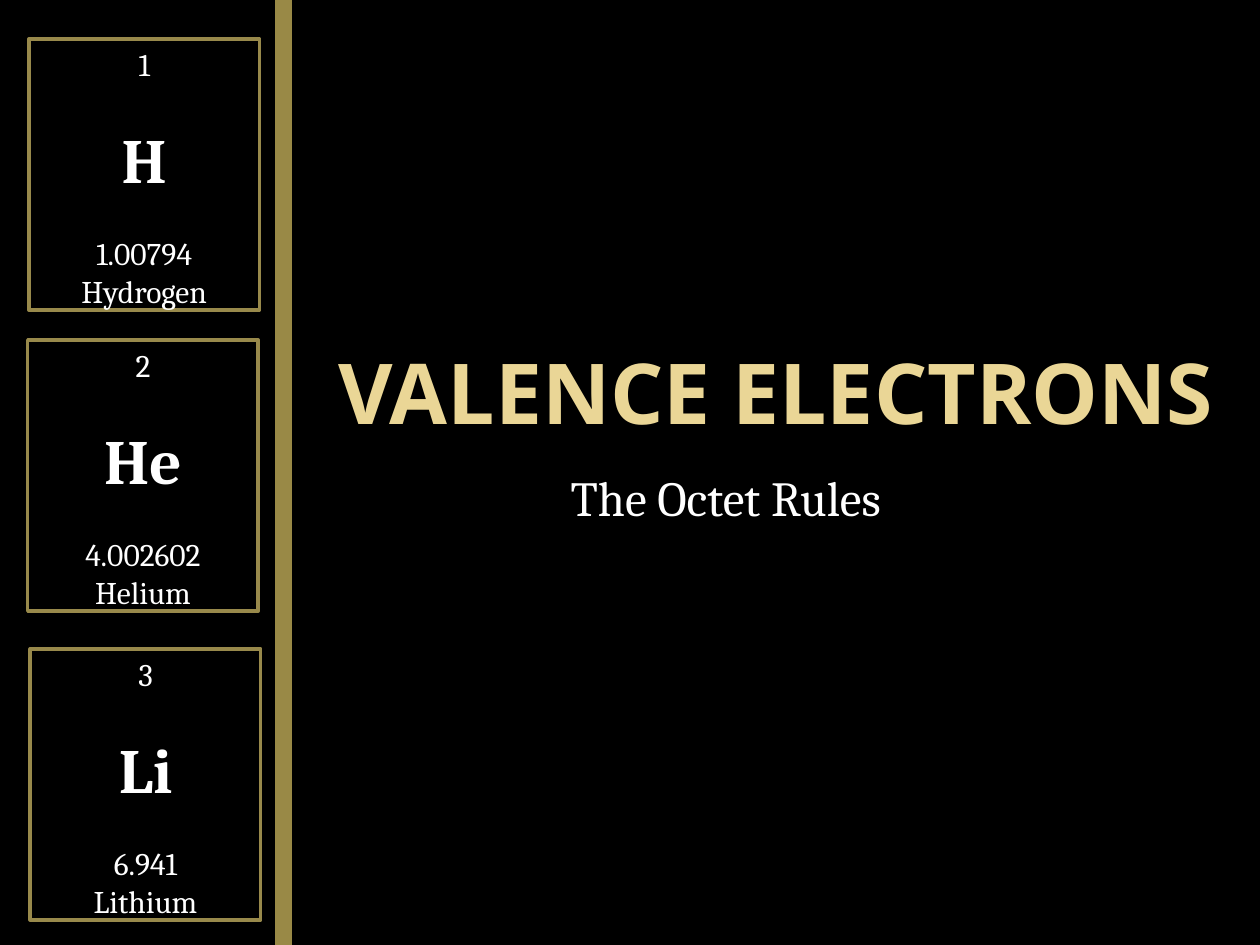
from dataclasses import dataclass

from lxml.etree import SubElement
from pptx import Presentation
from pptx.dml.color import RGBColor as RGB
from pptx.enum.shapes import MSO_CONNECTOR as Link, MSO_SHAPE as Kind
from pptx.enum.text import MSO_ANCHOR as Anchor, PP_ALIGN as Align
from pptx.oxml.ns import qn
from pptx.util import Inches, Pt


@dataclass(frozen=True)
class Theme:
    black: RGB = RGB(0x00, 0x00, 0x00)
    white: RGB = RGB(0xFF, 0xFF, 0xFF)
    cream: RGB = RGB(0xEA, 0xD6, 0x96)
    gold: RGB = RGB(0x98, 0x89, 0x4B)
    bar: RGB = RGB(0x99, 0x89, 0x46)
    head: str = "Open Sans"
    body: str = "Cambria"
    title: int = 48
    sub: int = 28
    symbol: int = 36
    small: int = 18
    gap: float = 21.5  # one small text line, in points


@dataclass(frozen=True)
class Element:
    number: int
    symbol: str
    mass: str
    name: str
    left: float
    top: float


THEME = Theme()
TILE_W, TILE_H = 1.83, 2.15
ELEMENTS = [
    Element(1, "H", "1.00794", "Hydrogen", 0.23, 0.31),
    Element(2, "He", "4.002602", "Helium", 0.22, 2.7),
    Element(3, "Li", "6.941", "Lithium", 0.24, 5.15),
]


def write(para, text: str, *, size: int, font: str = THEME.body,
          color: RGB = THEME.white, bold: bool = False, before: float = 0) -> None:
    """Fill one centred paragraph with formatted text."""
    para.alignment = Align.CENTER
    para.space_before = Pt(before)
    run = para.add_run()
    run.text = text
    run.font.size, run.font.name, run.font.bold = Pt(size), font, bold
    run.font.color.rgb = color


def add_box(slide, left: float, top: float, width: float, height: float,
            anchor: Anchor = Anchor.TOP):
    """Add a wrapping text box and return its text frame."""
    box = slide.shapes.add_textbox(*map(Inches, (left, top, width, height)))
    frame = box.text_frame
    frame.word_wrap = True
    frame.vertical_anchor = anchor
    return frame


def add_tile(slide, item: Element) -> None:
    """Draw one periodic table cell."""
    tile = slide.shapes.add_shape(
        Kind.RECTANGLE, *map(Inches, (item.left, item.top, TILE_W, TILE_H)))
    tile.shadow.inherit = False
    tile.fill.solid()
    tile.fill.fore_color.rgb = THEME.black
    tile.line.color.rgb = THEME.gold
    tile.line.width = Pt(2)
    frame = tile.text_frame
    frame.word_wrap = True
    frame.vertical_anchor = Anchor.TOP
    write(frame.paragraphs[0], str(item.number), size=THEME.small)
    write(frame.add_paragraph(), item.symbol, size=THEME.symbol, bold=True,
          before=THEME.gap)
    write(frame.add_paragraph(), item.mass, size=THEME.small, before=THEME.gap)
    write(frame.add_paragraph(), item.name, size=THEME.small)


def add_bar(slide, x: float, height: float) -> None:
    """Draw the thick upright divider."""
    bar = slide.shapes.add_connector(
        Link.STRAIGHT, Inches(x), Inches(0), Inches(x), Inches(height))
    bar.line.color.rgb = THEME.bar
    bar.line.width = Pt(10)
    SubElement(bar.element.spPr, qn("a:effectLst"))


def main() -> None:
    deck = Presentation()
    deck.slide_width, deck.slide_height = Inches(10), Inches(7.5)
    slide = deck.slides.add_slide(deck.slide_layouts[6])
    slide.background.fill.solid()
    slide.background.fill.fore_color.rgb = THEME.black

    # Title and subtitle
    title = add_box(slide, 1.66, 1.5, 9, 2, Anchor.BOTTOM)
    title.margin_left = title.margin_right = Inches(0.05)
    title.margin_top = title.margin_bottom = Inches(0)
    write(title.paragraphs[0], "VALENCE ELECTRONS", size=THEME.title,
          font=THEME.head, color=THEME.cream, bold=True)
    sub = add_box(slide, 2.26, 3.66, 7, 1.92)
    write(sub.paragraphs[0], "The Octet Rules", size=THEME.sub)

    # Element tiles and divider
    for item in ELEMENTS:
        add_tile(slide, item)
    add_bar(slide, 2.25, 7.5)

    deck.save("out.pptx")


if __name__ == "__main__":
    main()
